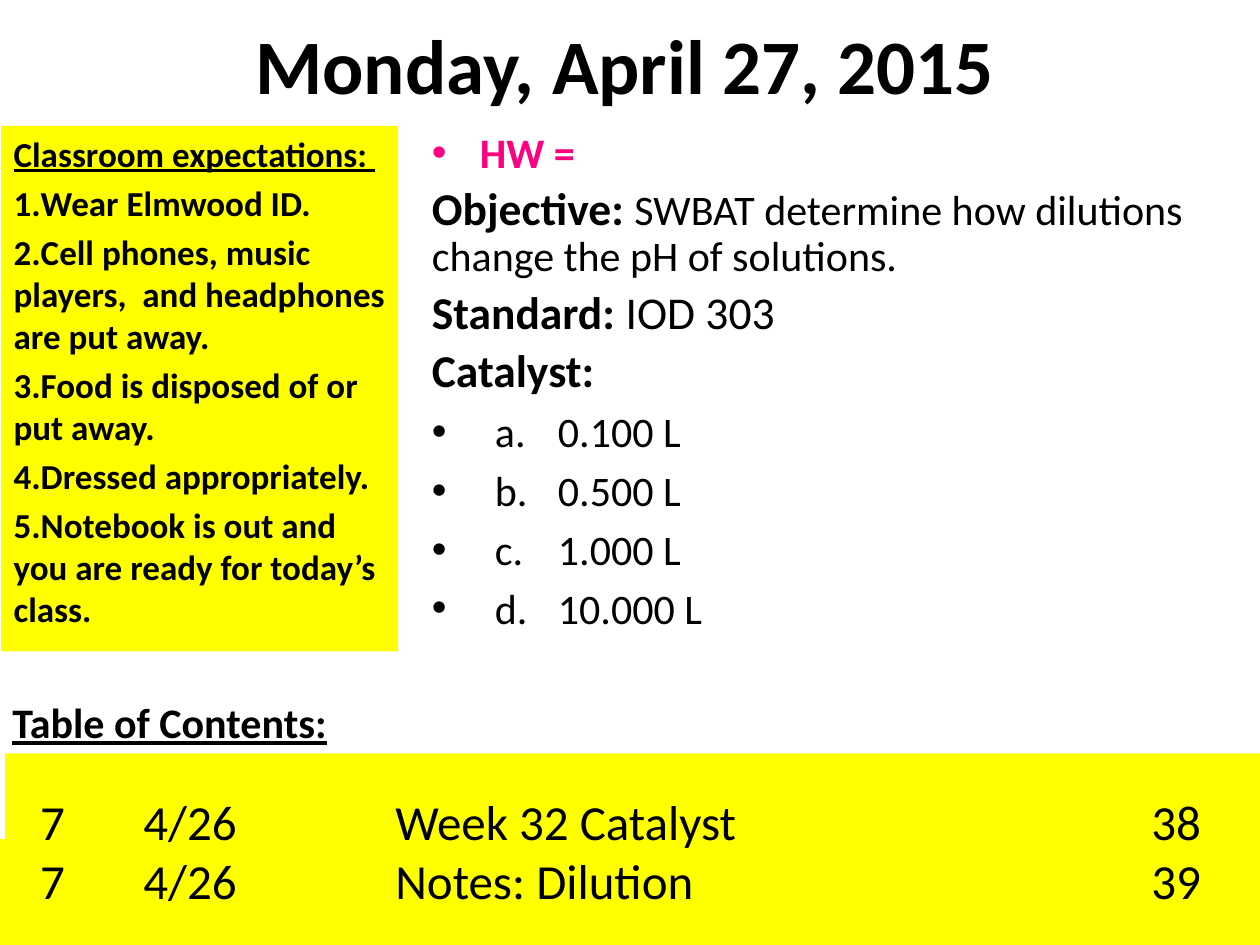
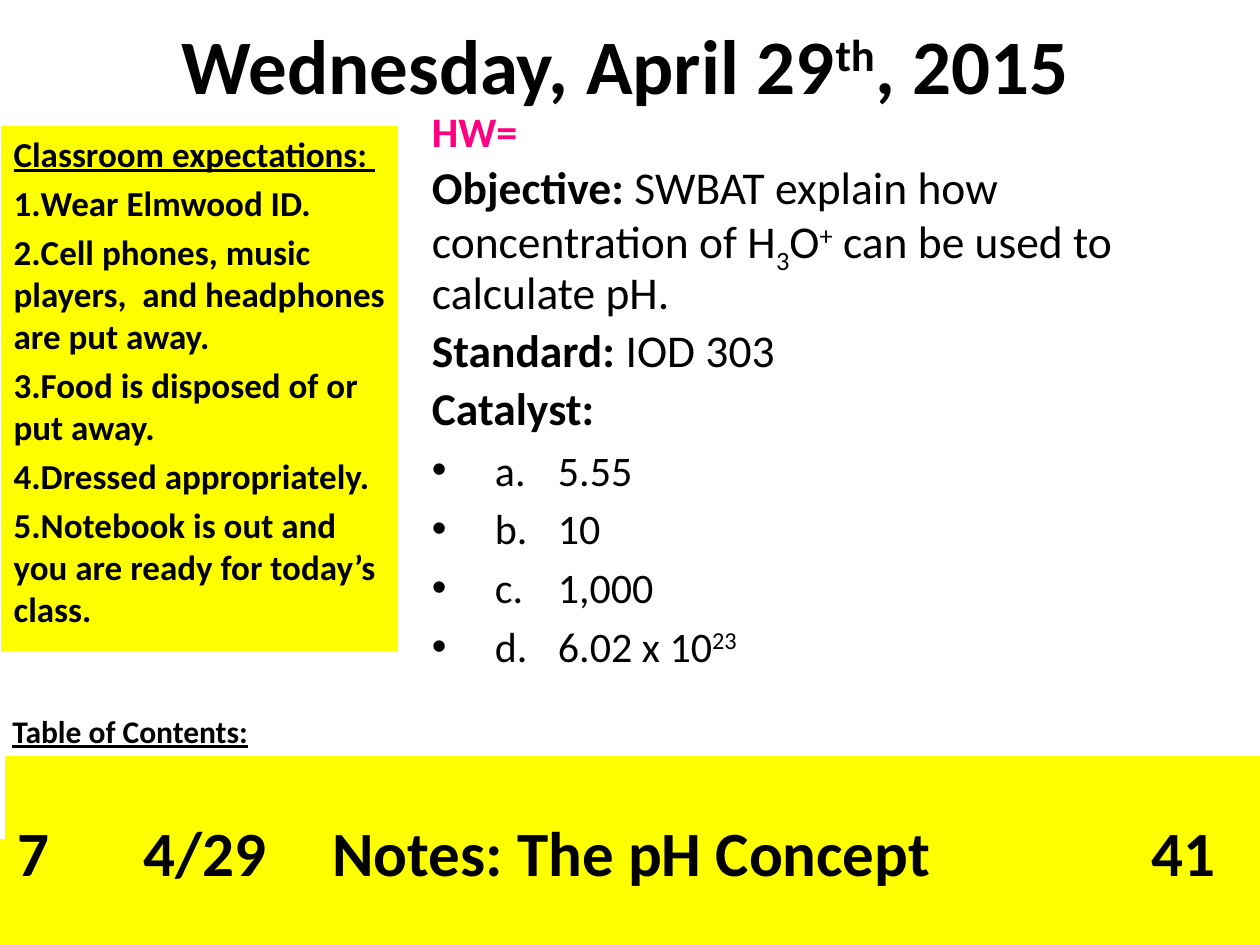
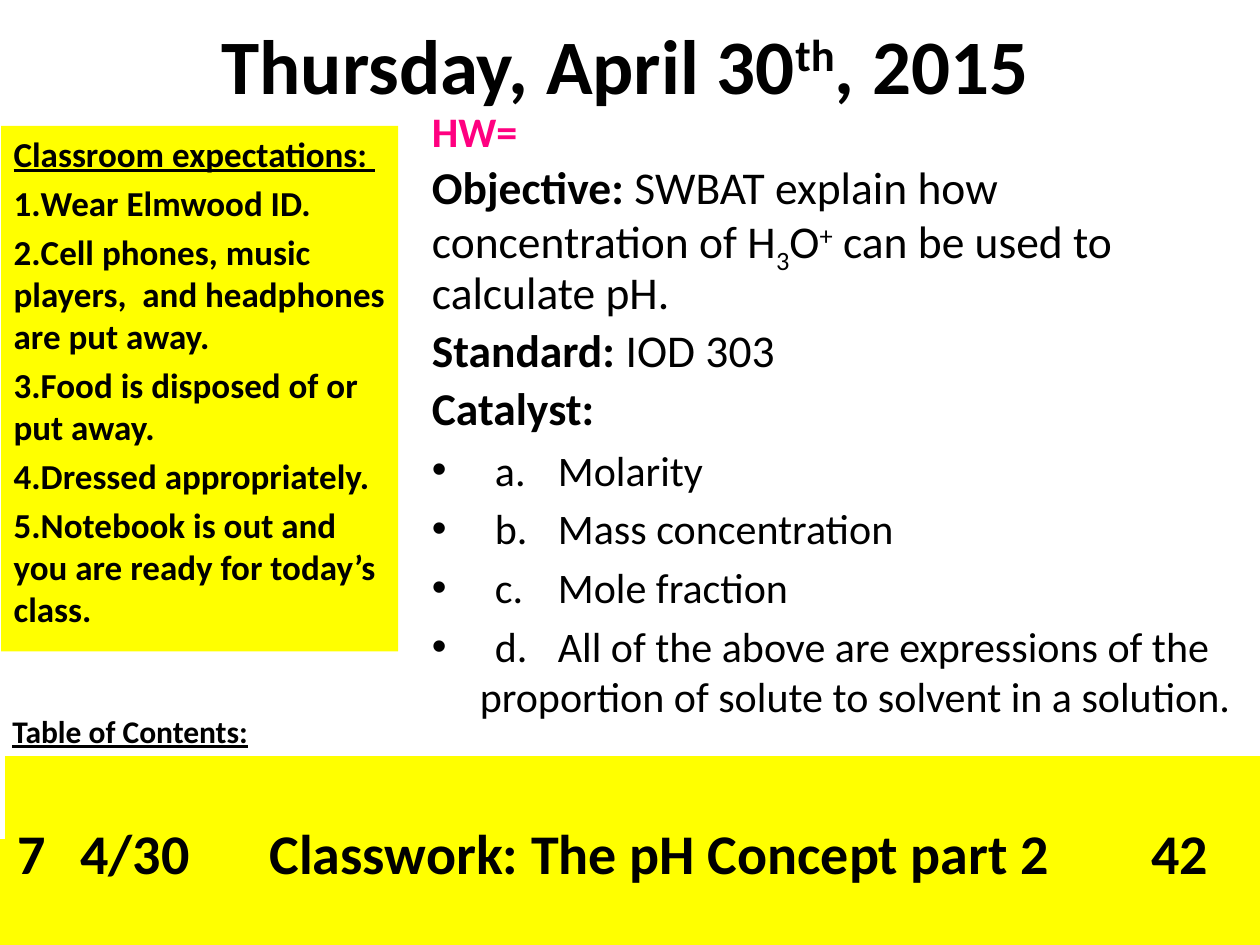
from lxml.etree import SubElement
from pptx import Presentation
from pptx.dml.color import RGBColor
from pptx.enum.shapes import MSO_SHAPE
from pptx.enum.text import MSO_ANCHOR as ANCHOR, PP_ALIGN as ALIGN
from pptx.oxml.ns import qn
from pptx.util import Inches, Pt

FONT = "Calibri"
BLACK = RGBColor(0x00, 0x00, 0x00)
PINK = RGBColor(0xFF, 0x00, 0x80)
YELLOW = RGBColor(0xFF, 0xFF, 0x00)

SLIDE_W, SLIDE_H = 10, 7.5
TITLE_BOX = (0.5, 0, 8.92, 0.92)
RULES_BOX = (0.01, 1, 3.15, 4.17)
BAND_TOP = 6.66
LESSON_LEFT, LESSON_BOTTOM = 3.33, 6.03
CONTENTS_LEFT, CONTENTS_BOTTOM = 0.04, 7.52
HANG = 0.38
BASELINES = {"^": 30000, "_": -25000}

# Runs are (text, marks): b bold, u underlined, ^ superscript, _ subscript
RULES_HEAD = "Classroom expectations: "
RULES = [
    "Wear Elmwood ID.",
    "Cell phones, music players,  and headphones are put away.",
    "Food is disposed of or put away.",
    "Dressed appropriately.",
    "Notebook is out and you are ready for today’s class.",
]
PH_OBJECTIVE = [("SWBAT explain how concentration of H", ""), ("3", "_"), ("O", ""),
                ("+", "^"), (" can be used to calculate pH.", "")]

DAYS = [
    {
        "title": [("Monday, April 27, 2015", "b")],
        "homework": "HW =", "homework_bullet": "•", "lesson_top": 1,
        "objective": [("SWBAT determine how dilutions change the pH of solutions.", "")],
        "objective_size": 24,
        "catalyst": [[("0.100 L", "")], [("0.500 L", "")], [("1.000 L", "")],
                     [("10.000 L", "")]],
        "heading_size": 24, "heading_height": 0.91,
        "contents_top": 5.98, "contents_size": 28, "contents_marks": "",
        "tabs": [0.18, 1, 3, 9],
        "contents": [("", "7", "4/26", "Week 32 Catalyst", "38"),
                     ("", "7", "4/26", "Notes: Dilution", "39")],
    },
    {
        "title": [("Wednesday, April 29", "b"), ("th", "b^"), (", 2015", "b")],
        "homework": "HW=", "homework_bullet": None, "lesson_top": 0.83,
        "objective": PH_OBJECTIVE, "objective_size": 26,
        "catalyst": [[("5.55", "")], [("10", "")], [("1,000", "")],
                     [("6.02 x 10", ""), ("23", "^")]],
        "heading_size": 18, "heading_height": 0.71,
        "contents_top": 6, "contents_size": 36, "contents_marks": "b",
        "tabs": [1, 2.5, 9],
        "contents": [("7", "4/29", "Notes: The pH Concept", "41")],
    },
    {
        "title": [("Thursday, April 30", "b"), ("th", "b^"), (", 2015", "b")],
        "homework": "HW=", "homework_bullet": None, "lesson_top": 0.83,
        "objective": PH_OBJECTIVE, "objective_size": 26,
        "catalyst": [[("Molarity", "")], [("Mass concentration", "")],
                     [("Mole fraction", "")],
                     [("All of the above are expressions of the proportion of "
                       "solute to solvent in a solution.", "")]],
        "heading_size": 18, "heading_height": 0.71,
        "contents_top": 6, "contents_size": 32, "contents_marks": "b",
        "tabs": [0.5, 2, 9],
        "contents": [("7", "4/30", "Classwork: The pH Concept part 2", "42")],
    },
]


def add_box(s, box, anchor=ANCHOR.TOP, fill=None):
    """Add a wrapping text box, or a filled rectangle when a fill is given."""
    at = [Inches(v) for v in box]
    if fill is None:
        sp = s.shapes.add_textbox(*at)
    else:
        sp = s.shapes.add_shape(MSO_SHAPE.RECTANGLE, *at)
        sp.shadow.inherit = False
        sp.fill.solid()
        sp.fill.fore_color.rgb = fill
        sp.line.fill.background()
    tf = sp.text_frame
    tf.word_wrap = True
    tf.vertical_anchor = anchor
    return tf


def add_runs(p, runs, size, color=BLACK):
    for text, marks in runs:
        r = p.add_run()
        r.text = text
        r.font.name = FONT
        r.font.size = Pt(size)
        r.font.color.rgb = color
        r.font.bold = "b" in marks
        r.font.underline = "u" in marks
        for mark, shift in BASELINES.items():
            if mark in marks:
                r._r.get_or_add_rPr().set("baseline", str(shift))


def add_paragraph(tf, runs, size, color=BLACK, align=ALIGN.LEFT, before=0, spacing=None):
    """Fill the first paragraph if it is empty, otherwise add one."""
    first = tf.paragraphs[0]
    p = tf.add_paragraph() if first.runs else first
    p.alignment = align
    p.space_before = Pt(before)
    if spacing:
        p.line_spacing = spacing
    add_runs(p, runs, size, color)
    return p


def set_bullet(p, char):
    pPr = p._p.get_or_add_pPr()
    pPr.set("marL", str(Inches(HANG)))
    pPr.set("indent", str(-Inches(HANG)))
    SubElement(pPr, qn("a:buFont"), typeface="Arial")
    SubElement(pPr, qn("a:buChar"), char=char)


def set_number(p):
    SubElement(p._p.get_or_add_pPr(), qn("a:buAutoNum"), type="arabicPeriod")


def set_tabs(p, stops):
    tabs = SubElement(p._p.get_or_add_pPr(), qn("a:tabLst"))
    for stop in stops:
        SubElement(tabs, qn("a:tab"), pos=str(Inches(stop)), algn="l")


def add_lesson(s, day):
    top = day["lesson_top"]
    tf = add_box(s, (LESSON_LEFT, top, SLIDE_W - LESSON_LEFT, LESSON_BOTTOM - top))
    p = add_paragraph(tf, [(day["homework"], "b")], 24, PINK, before=4.8, spacing=0.9)
    if day["homework_bullet"]:
        set_bullet(p, day["homework_bullet"])
    for label, runs, size in [("Objective: ", day["objective"], day["objective_size"]),
                              ("Standard: ", [("IOD 303", "")], 26),
                              ("Catalyst:", [], 26)]:
        p = add_paragraph(tf, [(label, "b")], 26, before=5.2, spacing=0.9)
        add_runs(p, runs, size)
    for letter, answer in zip("abcd", day["catalyst"]):
        p = add_paragraph(tf, [(f"\t{letter}.\t", "")] + answer, 24, before=4.8)
        set_bullet(p, "•")


def add_rules(s):
    tf = add_box(s, RULES_BOX, fill=YELLOW)
    add_paragraph(tf, [(RULES_HEAD, "bu")], 20, before=4)
    for rule in RULES:
        set_number(add_paragraph(tf, [(rule, "b")], 20, before=4))


def add_contents(s, day):
    add_box(s, (0, BAND_TOP, SLIDE_W, SLIDE_H - BAND_TOP), fill=YELLOW)
    top, height = day["contents_top"], day["heading_height"]
    tf = add_box(s, (0, top - height, 3.14, height), ANCHOR.BOTTOM)
    add_paragraph(tf, [("Table of Contents:", "bu")], day["heading_size"])
    tf = add_box(s, (CONTENTS_LEFT, top, SLIDE_W, CONTENTS_BOTTOM - top),
                 ANCHOR.MIDDLE, YELLOW)
    for entry in day["contents"]:
        p = add_paragraph(tf, [("\t".join(entry), day["contents_marks"])],
                          day["contents_size"])
        set_tabs(p, day["tabs"])


def main():
    prs = Presentation()
    prs.slide_width, prs.slide_height = Inches(SLIDE_W), Inches(SLIDE_H)
    for day in DAYS:
        s = prs.slides.add_slide(prs.slide_layouts[6])
        title = add_box(s, TITLE_BOX, ANCHOR.BOTTOM)
        add_paragraph(title, day["title"], 44, align=ALIGN.CENTER)
        add_lesson(s, day)
        add_rules(s)
        add_contents(s, day)
    prs.save("out.pptx")


if __name__ == "__main__":
    main()
